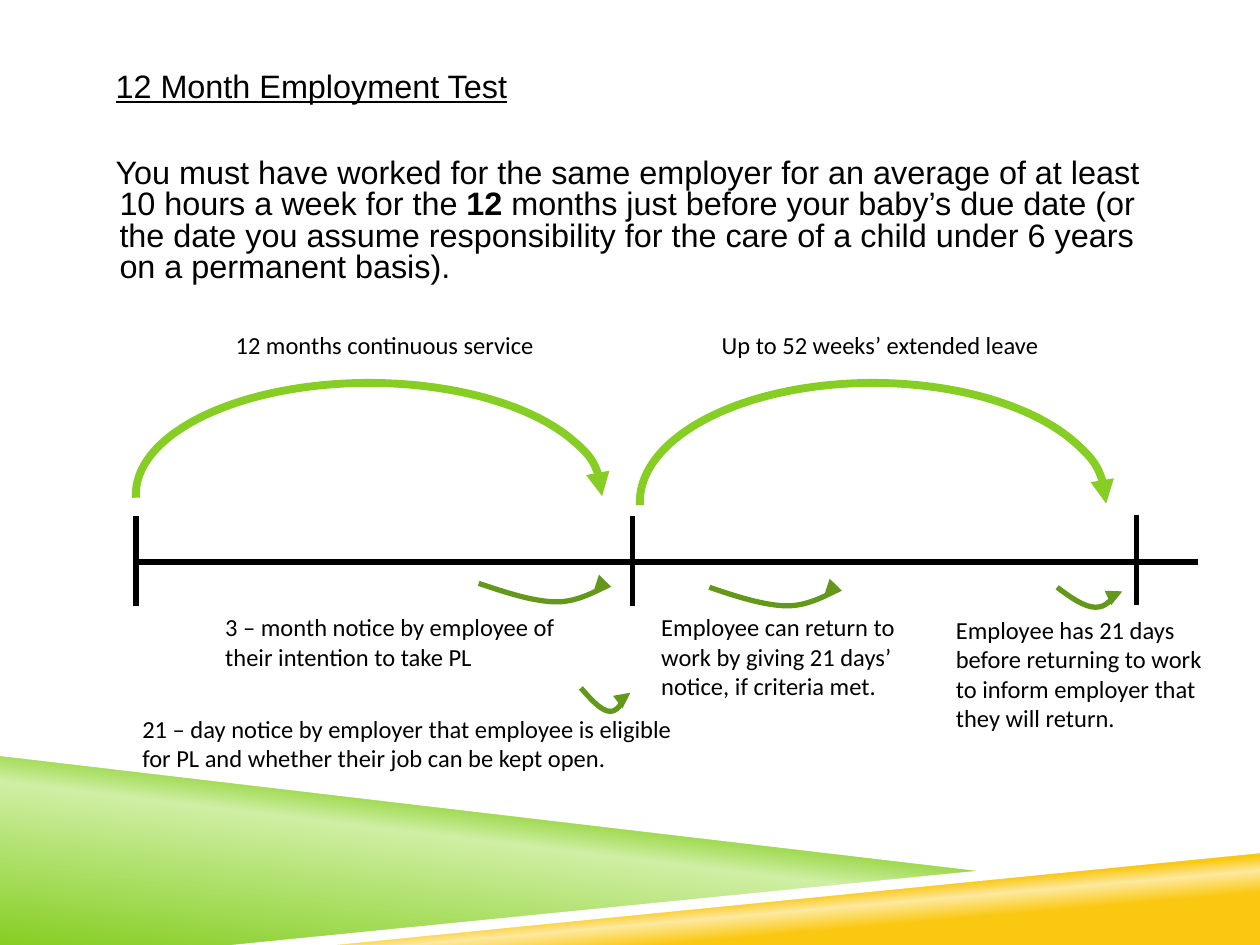
from copy import deepcopy

from pptx import Presentation
from pptx.dml import color
from pptx.enum import shapes, text
from pptx.oxml import ns
from pptx.oxml.xmlchemy import OxmlElement
from pptx.util import Cm, Pt

BLACK, LIME, GREEN, GOLD, WHITE = "000000", "86CE24", "63981B", "FAC810", "FFFFFF"
WIDE, HIGH = 25.4, 19.05

# Content, lengths in cm
HEAD = "12 Month Employment Test"
RULE = [
    ("You must have worked for the same employer for an average of at least "
     "10 hours a week for the ", False),
    ("12 ", True),
    ("months just before your baby’s due date (or the date you assume "
     "responsibility for the care of a child under 6 years on a permanent "
     "basis).", False),
]
LABELS = [
    ("12 months continuous service", (4.5, 6.53, 8, 0.86)),
    ("Up to 52 weeks’ extended leave", (14.3, 6.53, 8, 0.86)),
    ("3 – month notice by employee of their intention to take PL",
     (4.29, 12.22, 8, 1.45)),
    ("Employee can return to work by giving 21 days’ notice, if criteria met.",
     (13.08, 12.22, 5.77, 2.06)),
    ("Employee has 21 days before returning to work to inform employer that "
     "they will return.", (19.02, 12.27, 5.77, 2.64)),
    ("21 – day notice by employer that employee is eligible for PL and whether "
     "their job can be kept open.", (2.62, 14.27, 11.35, 1.45)),
]
BANDS = [  # outline, gradient stops or plain colour, angle
    ([(0, 15.16), (20.12, 17.58), (5.08, HIGH), (0, HIGH)],
     [(0, LIME), (0.52, "CFEFA4"), (0.66, LIME)], 277),
    ([(5.03, HIGH), (WIDE, 17.07), (WIDE, HIGH)],
     [(0.28, GOLD), (0.4, "FDE99F"), (0.48, GOLD)], 265),
    ([(0, 15.04), (0, 15.24), (20.07, 17.6), (21.13, 17.53)], WHITE, 0),
    ([(WIDE, 16.99), (4.67, HIGH), (6.76, HIGH), (WIDE, 17.2)], WHITE, 0),
]
AXIS, START, END = 11.33, 2.74, 24.16
TICKS = [(START, 10.41), (12.75, 10.41), (22.91, 10.39)]
TICK = 1.8
ARCS = [(START, 7.72, 9.4, 4.5), (12.9, 7.72, 9.4, 4.8)]
HOOKS = [(9.65, 11.76, 2.79, 0.38), (14.3, 11.84, 2.79, 0.38),
         (21.31, 11.84, 1.37, 0.41), (11.71, 13.87, 1.04, 0.48)]
# Bezier points of one hook inside a unit box
CURVE = [(0, 0), (0.2, 0.5), (0.4, 0.97), (0.56, 0.98), (0.72, 1), (0.89, 0.22),
         (0.95, 0.07), (1.02, -0.07), (1, 0.07), (0.96, 0.2)]


def rgb(code):
    return color.RGBColor.from_string(code)


def write(box, runs, size, font, line=None, under=None, inset=None, hang=False):
    frame = box.text_frame
    frame.word_wrap = True
    frame.auto_size = text.MSO_AUTO_SIZE.NONE
    frame.vertical_anchor = text.MSO_ANCHOR.TOP
    if inset is not None:
        frame.margin_left = frame.margin_right = Cm(inset)
    para = frame.paragraphs[0]
    para.alignment = text.PP_ALIGN.LEFT
    para.line_spacing = line
    if hang:
        props = para._p.get_or_add_pPr()
        props.set("marL", str(Cm(0.28)))
        props.set("indent", str(Cm(-0.08)))
    for words, bold in runs:
        run = para.add_run()
        run.text = words
        run.font.name, run.font.size = font, Pt(size)
        run.font.bold, run.font.underline = bold, under
        run.font.color.rgb = rgb(BLACK)


def place(box, spot):
    box.left, box.top, box.width, box.height = map(Cm, spot)


def stroke(item, code, width, arrow=False):
    item.line.color.rgb = rgb(code)
    item.line.width = Pt(width)
    if arrow:
        tail = OxmlElement("a:tailEnd")
        tail.set("type", "triangle")
        item.line._get_or_add_ln().append(tail)


def trace(points, close):
    first, *rest = [(Cm(x), Cm(y)) for x, y in points]
    pen = slide.shapes.build_freeform(*first)
    pen.add_line_segments(rest, close=close)
    form = pen.convert_to_shape()
    form.shadow.inherit = False
    return form


def blend(fill, stops, angle):
    fill.gradient()
    fill.gradient_angle = 360 - angle
    last = fill.gradient_stops[1]._gs
    last.addnext(deepcopy(last))
    for stop, (spot, code) in zip(fill.gradient_stops, stops):
        stop.position = spot
        stop.color.rgb = rgb(code)


def bend(form):
    """Join each three straight steps into one Bezier curve."""
    steps = list(form._element.iter(ns.qn("a:lnTo")))
    for i in range(0, len(steps), 3):
        cubic = OxmlElement("a:cubicBezTo")
        steps[i].addprevious(cubic)
        for step in steps[i:i + 3]:
            cubic.append(step[0])
            step.getparent().remove(step)


def rail(x1, y1, x2, y2):
    item = slide.shapes.add_connector(
        shapes.MSO_CONNECTOR.STRAIGHT, Cm(x1), Cm(y1), Cm(x2), Cm(y2))
    stroke(item, BLACK, 3)
    item._element.spPr.append(OxmlElement("a:effectLst"))


deck = Presentation()
deck.slide_width, deck.slide_height = Cm(WIDE), Cm(HIGH)
slide = deck.slides.add_slide(deck.slide_layouts[5])

# Bands at the foot
for points, paint, angle in BANDS:
    band = trace(points, True)
    band.line.fill.background()
    if isinstance(paint, str):
        band.fill.solid()
        band.fill.fore_color.rgb = rgb(paint)
    else:
        blend(band.fill, paint, angle)

# Heading and rule
prose = dict(size=18.5, font="Arial", line=0.8, inset=0, hang=True)
title = slide.shapes.title
place(title, (2.13, 1.35, 21.59, 1))
write(title, [(HEAD, None)], under=True, **prose)
body = slide.shapes.add_textbox(0, 0, 0, 0)
place(body, (2.13, 3.1, 21.59, 3.05))
write(body, RULE, **prose)

# Time line
rail(START, AXIS, END, AXIS)
for x, y in TICKS:
    rail(x, y, x, y + TICK)

# Large arcs over the line
for spot in ARCS:
    arc = slide.shapes.add_shape(shapes.MSO_SHAPE.ARC, *map(Cm, spot))
    arc.adjustments[0], arc.adjustments[1] = 107.53, 0.24
    arc.shadow.inherit = False
    arc.fill.background()
    stroke(arc, LIME, 4.5, arrow=True)

# Small hooks under the line
for x, y, w, h in HOOKS:
    hook = trace([(x + u * w, y + v * h) for u, v in CURVE], False)
    bend(hook)
    hook.fill.background()
    stroke(hook, GREEN, 3, arrow=True)

# Labels
for words, spot in LABELS:
    label = slide.shapes.add_textbox(*map(Cm, spot))
    write(label, [(words, None)], 14, "Calibri")

deck.save("out.pptx")
